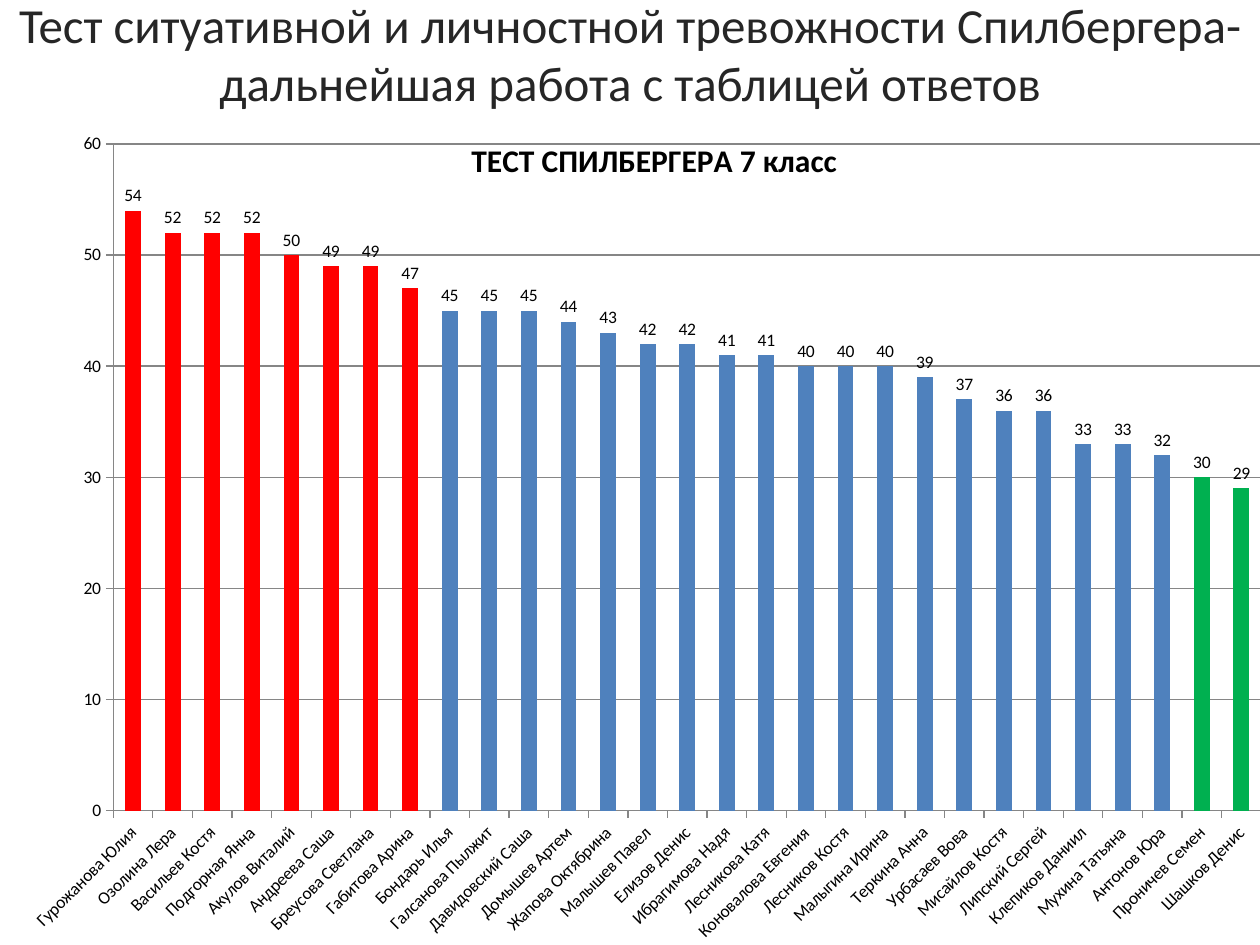
from lxml.etree import SubElement
from pptx import Presentation
from pptx.chart.data import CategoryChartData
from pptx.dml.color import RGBColor
from pptx.enum.chart import XL_CHART_TYPE as CHART, XL_LABEL_POSITION as LABEL, XL_TICK_MARK as TICK
from pptx.enum.text import MSO_ANCHOR as ANCHOR, MSO_AUTO_SIZE as AUTO, PP_ALIGN as ALIGN
from pptx.oxml import parse_xml
from pptx.oxml.ns import nsdecls, qn
from pptx.util import Pt

FONT = "Calibri"
COLORS = {"title": "262626", "text": "000000", "line": "868686",
          "high": "FF0000", "medium": "4F81BD", "low": "00B050"}
HIGH_FROM, LOW_TO = 46, 30
SCORES = [
    ("Гурожанова Юлия", 54), ("Озолина Лера", 52), ("Васильев Костя", 52),
    ("Подгорная Янна", 52), ("Акулов Виталий", 50), ("Андреева Саша", 49),
    ("Бреусова Светлана", 49), ("Габитова Арина", 47), ("Бондарь Илья", 45),
    ("Галсанова Пылжит", 45), ("Давидовский Саша", 45), ("Домышев Артем", 44),
    ("Жапова Октябрина", 43), ("Малышев Павел", 42), ("Елизов Денис", 42),
    ("Ибрагимова Надя", 41), ("Лесникова Катя", 41), ("Коновалова Евгения", 40),
    ("Лесников Костя", 40), ("Малыгина Ирина", 40), ("Теркина Анна", 39),
    ("Урбасаев Вова", 37), ("Мисайлов Костя", 36), ("Липский Сергей", 36),
    ("Клепиков Даниил", 33), ("Мухина Татьяна", 33), ("Антонов Юра", 32),
    ("Проничев Семен", 30), ("Шашков Денис", 29),
]


def rgb(name):
    """Return a palette colour."""
    return RGBColor.from_string(COLORS[name])


def style_font(font, size, color, bold=False):
    """Set the face, size, weight and colour of a font."""
    font.name, font.size, font.bold = FONT, Pt(size), bold
    font.color.rgb = rgb(color)


def style_line(line):
    """Give an axis or gridline its thin grey stroke."""
    line.color.rgb = rgb("line")
    line.width = Pt(0.75)


def set_layout(parent, index, target=None, **fractions):
    """Lay out a chart part by fractions of the chart area."""
    layout = parent.find(qn("c:layout"))
    if layout is None:
        layout = parent.makeelement(qn("c:layout"))
        parent.insert(index, layout)
    manual = SubElement(layout, qn("c:manualLayout"))
    if target:
        SubElement(manual, qn("c:layoutTarget")).set("val", target)
    for key in ("x", "y"):
        SubElement(manual, qn(f"c:{key}Mode")).set("val", "edge")
    for key, value in fractions.items():
        SubElement(manual, qn(f"c:{key}")).set("val", str(value))


def add_title(slide, text, box):
    """Place the slide title in its box."""
    sp = slide.shapes.title
    sp.left, sp.top, sp.width, sp.height = map(Pt, box)
    tf = sp.text_frame
    tf.word_wrap, tf.auto_size, tf.vertical_anchor = True, AUTO.NONE, ANCHOR.MIDDLE
    p = tf.paragraphs[0]
    p.alignment = ALIGN.CENTER
    r = p.add_run()
    r.text = text
    style_font(r.font, 28, "title")
    r._r.get_or_add_rPr().insert(0, parse_xml(
        f'<a:ln {nsdecls("a")} w="{Pt(1.5)}"><a:solidFill>'
        f'<a:srgbClr val="{COLORS["title"]}"/></a:solidFill></a:ln>'))


def style_axes(chart):
    """Format both axes and the gridlines."""
    names, values = chart.category_axis, chart.value_axis
    for axis in (names, values):
        axis.major_tick_mark, axis.minor_tick_mark = TICK.OUTSIDE, TICK.NONE
        style_line(axis.format.line)
        style_font(axis.tick_labels.font, 10, "text")
    names.has_major_gridlines = False
    body = names._element.find(qn("c:txPr")).find(qn("a:bodyPr"))
    body.set("rot", str(-45 * 60000))
    values.minimum_scale, values.maximum_scale, values.major_unit = 0, 60, 10
    values.has_major_gridlines = True
    style_line(values.major_gridlines.format.line)


def add_chart_title(chart, text):
    """Lay the chart title over the plot."""
    chart.has_title = True
    title = chart.chart_title
    r = title.text_frame.paragraphs[0].add_run()
    r.text = text
    style_font(r.font, 18, "text", bold=True)
    node = title._element
    set_layout(node, 1, x=0.35, y=0.02)
    overlay = node.find(qn("c:overlay"))
    if overlay is None:
        overlay = node.makeelement(qn("c:overlay"))
        node.insert(2, overlay)
    overlay.set("val", "1")


def add_scores_chart(slide, box):
    """Draw the scores as columns coloured by anxiety level."""
    data = CategoryChartData()
    data.categories = [name for name, _ in SCORES]
    data.add_series("Series 1", [score for _, score in SCORES])
    chart = slide.shapes.add_chart(CHART.COLUMN_CLUSTERED, *map(Pt, box), data).chart
    chart.has_legend = False
    style_font(chart.font, 10, "text")
    add_chart_title(chart, "ТЕСТ СПИЛБЕРГЕРА 7 класс")
    style_axes(chart)
    area = chart._chartSpace.find(qn("c:chart")).find(qn("c:plotArea"))
    set_layout(area, 0, "inner", x=0.07, y=0.034, w=0.912, h=0.804)

    plot = chart.plots[0]
    plot.gap_width, plot.vary_by_categories = 150, False
    plot.has_data_labels = True
    labels = plot.data_labels
    labels.show_value, labels.position = True, LABEL.OUTSIDE_END
    style_font(labels.font, 10, "text")
    series = plot.series[0]
    series.format.fill.solid()
    series.format.fill.fore_color.rgb = rgb("medium")
    for i, (_, score) in enumerate(SCORES):
        if LOW_TO < score < HIGH_FROM:
            continue
        fill = series.points[i].format.fill
        fill.solid()
        fill.fore_color.rgb = rgb("high" if score >= HIGH_FROM else "low")


def main():
    """Build and save the slide."""
    prs = Presentation()
    prs.slide_width, prs.slide_height = Pt(720), Pt(540)
    slide = prs.slides.add_slide(prs.slide_layouts[5])
    add_title(slide, "Тест ситуативной и личностной тревожности Спилбергера-"
              "дальнейшая работа с таблицей ответов", (0, 0, 720, 60.5))
    add_scores_chart(slide, (14.4, 66.2, 719.3, 473.8))
    prs.save("out.pptx")


if __name__ == "__main__":
    main()
